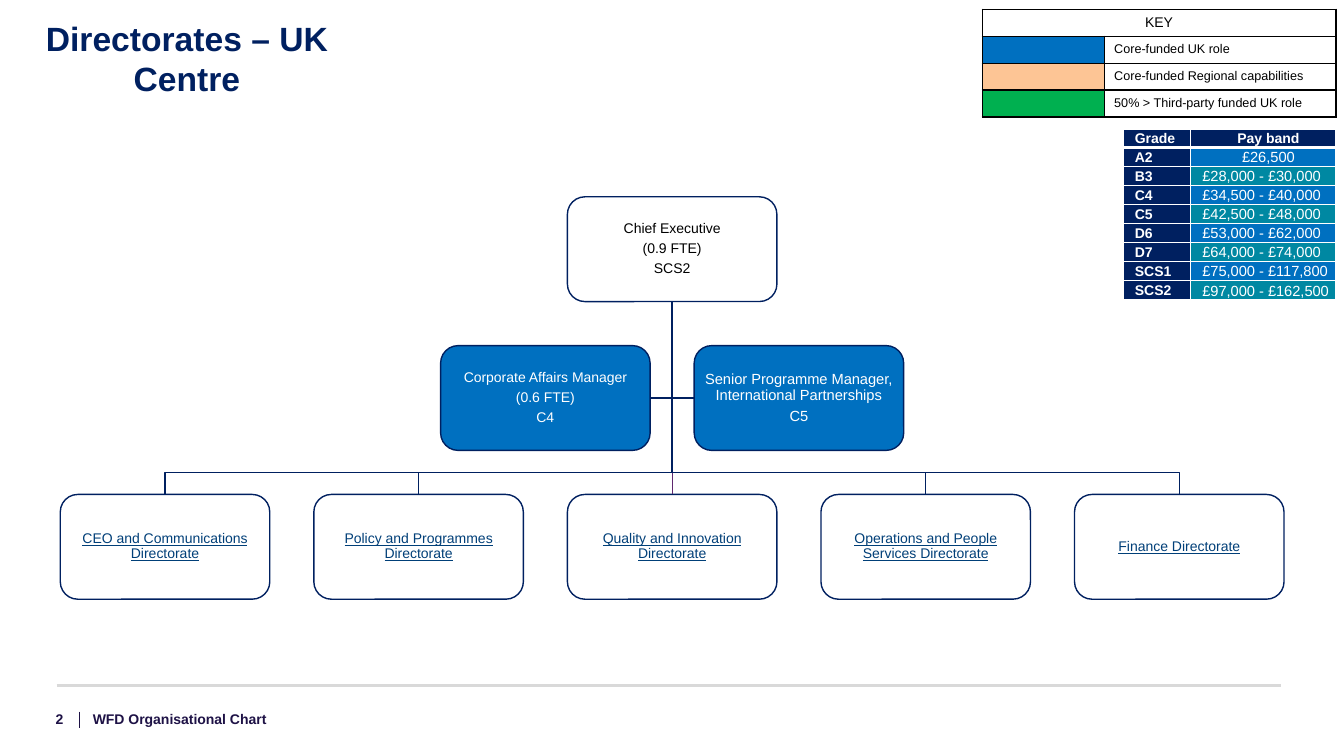
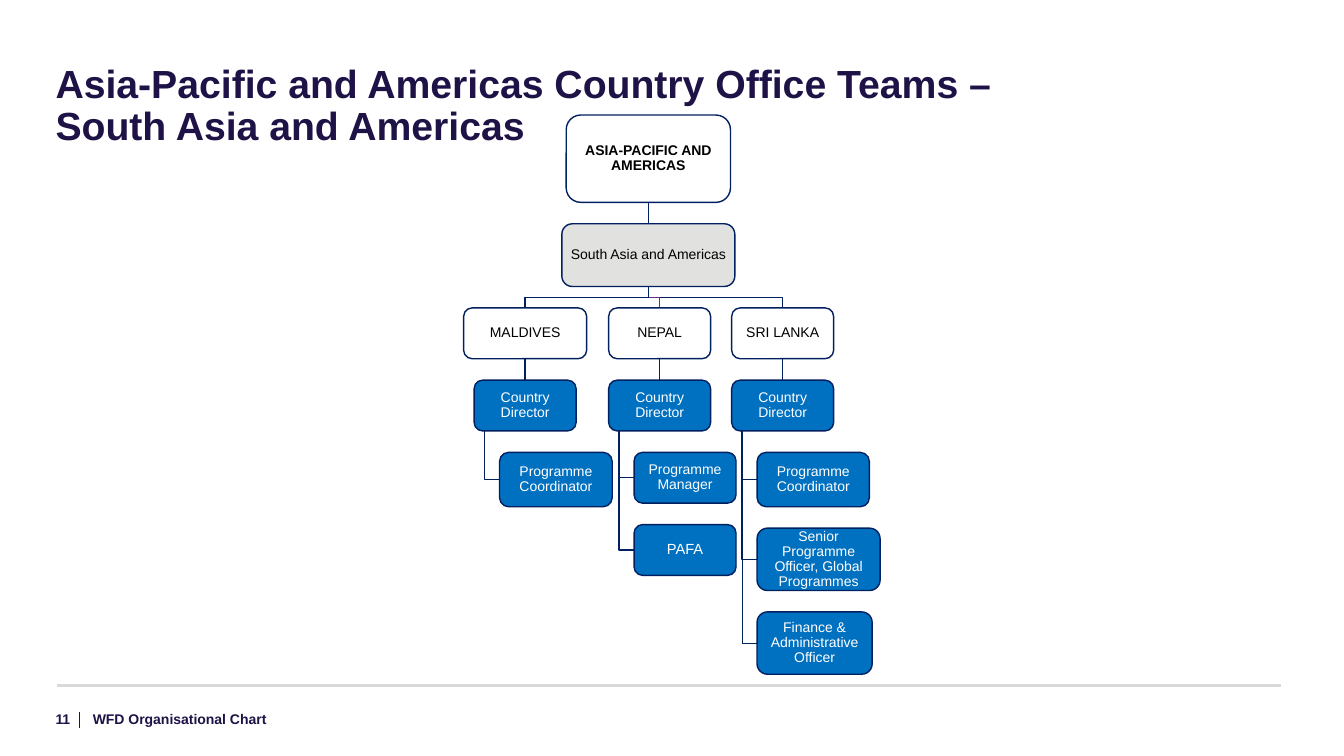
from dataclasses import dataclass
from typing import NamedTuple, Optional, Union

from lxml import etree
from pptx import Presentation
from pptx import util as u
from pptx.dml.color import RGBColor
from pptx.enum import shapes, text
from pptx.oxml.ns import qn

Cm, Pt = u.Cm, u.Pt
FONT = "Arial"
COLOURS = {
    "navy": "002060", "ink": "1E1246", "blue": "0070C0", "teal": "0088A2",
    "peach": "FDC595", "green": "00B050", "grey": "E1E2E0", "rule": "D9D9D9",
    "link": "003F78", "purple": "5F286F", "violet": "6C2D7D",
    "black": "000000", "white": "FFFFFF",
}
LEFT, CENTRE = text.PP_ALIGN.LEFT, text.PP_ALIGN.CENTER
TOP, MIDDLE = text.MSO_ANCHOR.TOP, text.MSO_ANCHOR.MIDDLE
SITE_TOP, SITE_BOTTOM = 0, 2


class Point(NamedTuple):
    x: float
    y: float


class Joint(NamedTuple):
    shape: object
    site: int


class KeyEntry(NamedTuple):
    colour: str
    label: str


class Grade(NamedTuple):
    name: str
    pay: str


@dataclass
class Box:
    text: str
    left: float
    top: float
    width: float
    height: float
    fill: Optional[str] = None
    colour: str = "black"
    size: float = 10
    bold: bool = False
    underline: bool = False

    @property
    def centre(self) -> float:
        return self.left + self.width / 2

    @property
    def middle(self) -> float:
        return self.top + self.height / 2

    @property
    def right(self) -> float:
        return self.left + self.width

    @property
    def bottom(self) -> float:
        return self.top + self.height


class Role(NamedTuple):
    text: str
    width: float
    height: float
    size: float = 10
    line: float = 1


class Country(NamedTuple):
    name: str
    left: float
    width: float
    roles: list
    branch: str = "navy"


# Shared drawing helpers
def rgb(name: str) -> RGBColor:
    return RGBColor.from_string(COLOURS[name])


def paint(target, colour: Optional[str]) -> None:
    if colour:
        target.fill.solid()
        target.fill.fore_color.rgb = rgb(colour)
    else:
        target.fill.background()


def outline(target, colour: str = "navy", width: float = 1) -> None:
    target.line.color.rgb = rgb(colour)
    target.line.width = Pt(width)


def write(frame, content: str, *, size: float = 10, colour: str = "black", bold: bool = False,
          underline: bool = False, align=LEFT, spacing: Optional[float] = None,
          after: float = 0) -> None:
    for index, line in enumerate(content.split("\n")):
        paragraph = frame.paragraphs[0] if index == 0 else frame.add_paragraph()
        paragraph.text = line
        paragraph.alignment = align
        paragraph.space_after = Pt(after)
        if spacing:
            paragraph.line_spacing = spacing
        for run in paragraph.runs:
            run.font.name, run.font.size = FONT, Pt(size)
            run.font.bold, run.font.underline = bold, underline
            run.font.color.rgb = rgb(colour)
        if not line:
            etree.SubElement(paragraph._p, qn("a:endParaRPr"), sz=str(int(size * 100)))


def set_margins(target, left: float, top: float, right: float, bottom: float) -> None:
    target.margin_left, target.margin_top = Cm(left), Cm(top)
    target.margin_right, target.margin_bottom = Cm(right), Cm(bottom)


def add_text(slide, content: str, left: float, top: float, width: float, height: float, *,
             anchor=TOP, inset: bool = False, **style) -> None:
    frame = slide.shapes.add_textbox(Cm(left), Cm(top), Cm(width), Cm(height)).text_frame
    frame.word_wrap = True
    frame.vertical_anchor = anchor
    if not inset:
        set_margins(frame, 0, 0, 0, 0)
    write(frame, content, **style)


def add_box(slide, box: Box):
    shape = slide.shapes.add_shape(shapes.MSO_SHAPE.ROUNDED_RECTANGLE, Cm(box.left), Cm(box.top),
                                   Cm(box.width), Cm(box.height))
    shape.shadow.inherit = False
    paint(shape, box.fill)
    outline(shape)
    frame = shape.text_frame
    frame.word_wrap = True
    frame.vertical_anchor = MIDDLE
    set_margins(frame, 0.03, 0.03, 0.03, 0.03)
    write(frame, box.text, size=box.size, colour=box.colour, bold=box.bold,
          underline=box.underline, align=CENTRE, spacing=0.9, after=3.5)
    return shape


def add_line(slide, start: Union[Point, Joint], end: Union[Point, Joint],
             colour: str = "navy", width: float = 1) -> None:
    places = [Point(0, 0) if isinstance(place, Joint) else place for place in (start, end)]
    connector = slide.shapes.add_connector(
        shapes.MSO_CONNECTOR.STRAIGHT, *(Cm(value) for place in places for value in place))
    if isinstance(start, Joint):
        connector.begin_connect(*start)
    if isinstance(end, Joint):
        connector.end_connect(*end)
    outline(connector, colour, width)
    etree.SubElement(connector._element.spPr, qn("a:effectLst"))


def add_branch(slide, points: list, colour: str = "navy", width: float = 1) -> None:
    """Draws an open angled line through the points."""
    start, *others = [(Cm(x), Cm(y)) for x, y in points]
    builder = slide.shapes.build_freeform(*start)
    builder.add_line_segments(others, close=False)
    branch = builder.convert_to_shape()
    branch.shadow.inherit = False
    paint(branch, None)
    outline(branch, colour, width)


def add_drop(slide, parent: Box, child: Box, bus: float, colour: str = "navy") -> None:
    add_branch(slide, [Point(parent.centre, parent.bottom), Point(parent.centre, bus),
                       Point(child.centre, bus), Point(child.centre, child.top)], colour)


def add_table(slide, left: float, top: float, columns: list, rows: list):
    table = slide.shapes.add_table(len(rows), len(columns), Cm(left), Cm(top),
                                   Cm(sum(columns)), Cm(sum(rows))).table
    table.first_row = table.horz_banding = False
    for column, width in zip(table.columns, columns):
        column.width = Cm(width)
    for row, height in zip(table.rows, rows):
        row.height = Cm(height)
    return table


def fill_cell(cell, content: str, fill: Optional[str], border: str, margins: tuple,
              top_line: float = 1, bottom_line: float = 1, **style) -> None:
    properties = cell._tc.get_or_add_tcPr()
    for edge, width in (("L", 1), ("R", 1), ("T", top_line), ("B", bottom_line)):
        line = etree.SubElement(properties, qn(f"a:ln{edge}"), w=str(int(Pt(width))))
        solid = etree.SubElement(line, qn("a:solidFill"))
        etree.SubElement(solid, qn("a:srgbClr"), val=COLOURS[border])
    paint(cell, fill)
    cell.vertical_anchor = MIDDLE
    set_margins(cell, *margins)
    write(cell.text_frame, content, **style)


def add_slide(presentation, number: int):
    slide = presentation.slides.add_slide(presentation.slide_layouts[6])
    add_line(slide, Point(2.01, 17.93), Point(2.01, 18.34), "ink", 0.75)
    add_line(slide, Point(1.43, 17.27), Point(32.28, 17.27), "rule", 2)
    for content, left, width in (("WFD Organisational Chart", 2.34, 12.9), (str(number), 1.4, 0.94)):
        add_text(slide, content, left, 17.82, width, 0.61, anchor=MIDDLE, colour="ink", bold=True)
    return slide


# Directorates slide
DIRECTORATES = ["CEO and Communications Directorate", "Policy and Programmes Directorate",
                "Quality and Innovation Directorate", "Operations and People Services Directorate",
                "Finance Directorate"]
KEY = [KeyEntry("blue", "Core-funded UK role"),
       KeyEntry("peach", "Core-funded Regional capabilities"),
       KeyEntry("green", "50% > Third-party funded UK role")]
GRADES = [Grade("Grade", "Pay band"), Grade("A2", "£26,500"), Grade("B3", "£28,000 - £30,000"),
          Grade("C4", "£34,500 - £40,000"), Grade("C5", "£42,500 - £48,000"),
          Grade("D6", "£53,000 - £62,000"), Grade("D7", "£64,000 - £74,000"),
          Grade("SCS1", "£75,000 - £117,800"), Grade("SCS2", "£97,000 - £162,500")]


def add_key(slide) -> None:
    table = add_table(slide, 24.75, 0.23, [3.08, 5.84], [0.68] * (len(KEY) + 1))
    margins = (0.25, 0, 0.25, 0)
    table.cell(0, 0).merge(table.cell(0, 1))
    fill_cell(table.cell(0, 0), "KEY", None, "black", margins, align=CENTRE)
    fill_cell(table.cell(0, 1), "", None, "black", margins, size=9)
    for row, entry in enumerate(KEY, 1):
        fill_cell(table.cell(row, 0), "", entry.colour, "black", margins, size=9)
        fill_cell(table.cell(row, 1), entry.label, None, "black", margins, size=9)


def add_pay_bands(slide) -> None:
    table = add_table(slide, 28.3, 3.26, [1.7, 3.66], [0.45] + [0.48] * (len(GRADES) - 1))
    for row, grade in enumerate(GRADES):
        header = row == 0
        band = "navy" if header else "blue" if row % 2 else "teal"
        lines = {"top_line": 3 if row == 1 else 1, "bottom_line": 3 if header else 1}
        common = ("white", (0.3, 0.03, 0.03, 0))
        fill_cell(table.cell(row, 0), grade.name, "navy", *common, **lines,
                  colour="white", bold=True)
        fill_cell(table.cell(row, 1), grade.pay, band, *common, **lines, colour="white",
                  bold=header, size=10 if header else 10.5, align=CENTRE if row < 2 else LEFT)


def build_directorates(presentation) -> None:
    slide = add_slide(presentation, 2)
    left, top, pitch, row_pitch, size = 1.52, 4.96, 6.39, 3.75, (5.28, 2.64)
    chief = Box("Chief Executive\n(0.9 FTE)\nSCS2", left + 2 * pitch, top, *size)
    manager, partner = (
        Box(content, left + step * pitch, top + row_pitch, *size, "blue", "white", points)
        for content, step, points in (
            ("Corporate Affairs Manager\n(0.6 FTE)\nC4", 1.5, 10),
            ("Senior Programme Manager, International Partnerships\nC5", 2.5, 10.5)))
    row_top = top + 2 * row_pitch
    directorates = [Box(name, left + step * pitch, row_top, *size, colour="link", underline=True)
                    for step, name in enumerate(DIRECTORATES)]
    chief_shape, *directorate_shapes = [add_box(slide, box) for box in (chief, *directorates)]

    # Lines from the chief executive
    add_line(slide, Joint(chief_shape, SITE_BOTTOM), Joint(directorate_shapes[2], SITE_TOP), "purple")
    for box in directorates[:2] + directorates[3:]:
        add_drop(slide, chief, box, row_top - 0.55)
    for box, side in ((manager, manager.right), (partner, partner.left)):
        add_branch(slide, [Point(chief.centre, chief.bottom), Point(chief.centre, box.middle),
                           Point(side, box.middle)])
        add_box(slide, box)

    add_text(slide, "Directorates – UK Centre", 0, 0.33, 9.42, 2.31, inset=True,
             size=24, colour="navy", bold=True, align=CENTRE)
    add_key(slide)
    add_pay_bands(slide)


# Country office slide
COUNTRIES = [
    Country("MALDIVES", 11.95, 3.1, [Role("Programme Coordinator", 2.84, 1.37)]),
    Country("NEPAL", 15.34, 2.57, [Role("Programme Manager", 2.57, 1.28),
                                   Role("PAFA", 2.57, 1.28, 10.5)], "violet"),
    Country("SRI LANKA", 18.44, 2.57, [
        Role("Programme Coordinator", 2.83, 1.37),
        Role("Senior Programme Officer, Global Programmes", 3.1, 1.57),
        Role("Finance & Administrative Officer", 2.9, 1.57, line=0.5)]),
]
GAP = 0.54


def add_country(slide, country: Country, area: Box) -> None:
    width, height = 2.57, 1.28
    top = area.bottom + GAP
    director = Box("Country Director", country.left, top + height + GAP, width, height, "blue", "white")
    name = Box(country.name, director.centre - country.width / 2, top, country.width, height)
    add_drop(slide, area, name, area.bottom + GAP / 2, country.branch)
    name_shape, director_shape = add_box(slide, name), add_box(slide, director)
    add_line(slide, Joint(name_shape, SITE_BOTTOM), Joint(director_shape, SITE_TOP))
    stem = director.left + 0.26
    next_top = director.bottom + GAP
    for role in country.roles:
        box = Box(role.text, director.left + 0.64, next_top, role.width, role.height,
                  "blue", "white", role.size)
        add_branch(slide, [Point(stem, director.bottom), Point(stem, box.middle),
                           Point(box.left, box.middle)], width=role.line)
        add_box(slide, box)
        next_top = box.bottom + GAP


def build_country_offices(presentation) -> None:
    slide = add_slide(presentation, 11)
    add_text(slide, "Asia-Pacific and Americas Country Office Teams –\vSouth Asia and Americas",
             1.4, 1.63, 30.86, 2.54, size=28, colour="ink", bold=True, spacing=0.9)
    region = Box("ASIA-PACIFIC AND AMERICAS", 14.27, 2.9, 4.14, 2.2, bold=True)
    area = Box("South Asia and Americas", 14.16, region.bottom + GAP, 4.36, 1.58, "grey")
    region_shape, area_shape = add_box(slide, region), add_box(slide, area)
    add_line(slide, Joint(region_shape, SITE_BOTTOM), Joint(area_shape, SITE_TOP))
    for country in reversed(COUNTRIES):
        add_country(slide, country, area)


def main() -> None:
    presentation = Presentation()
    presentation.slide_width, presentation.slide_height = Cm(33.87), Cm(19.05)
    build_directorates(presentation)
    build_country_offices(presentation)
    presentation.save("out.pptx")


if __name__ == "__main__":
    main()
